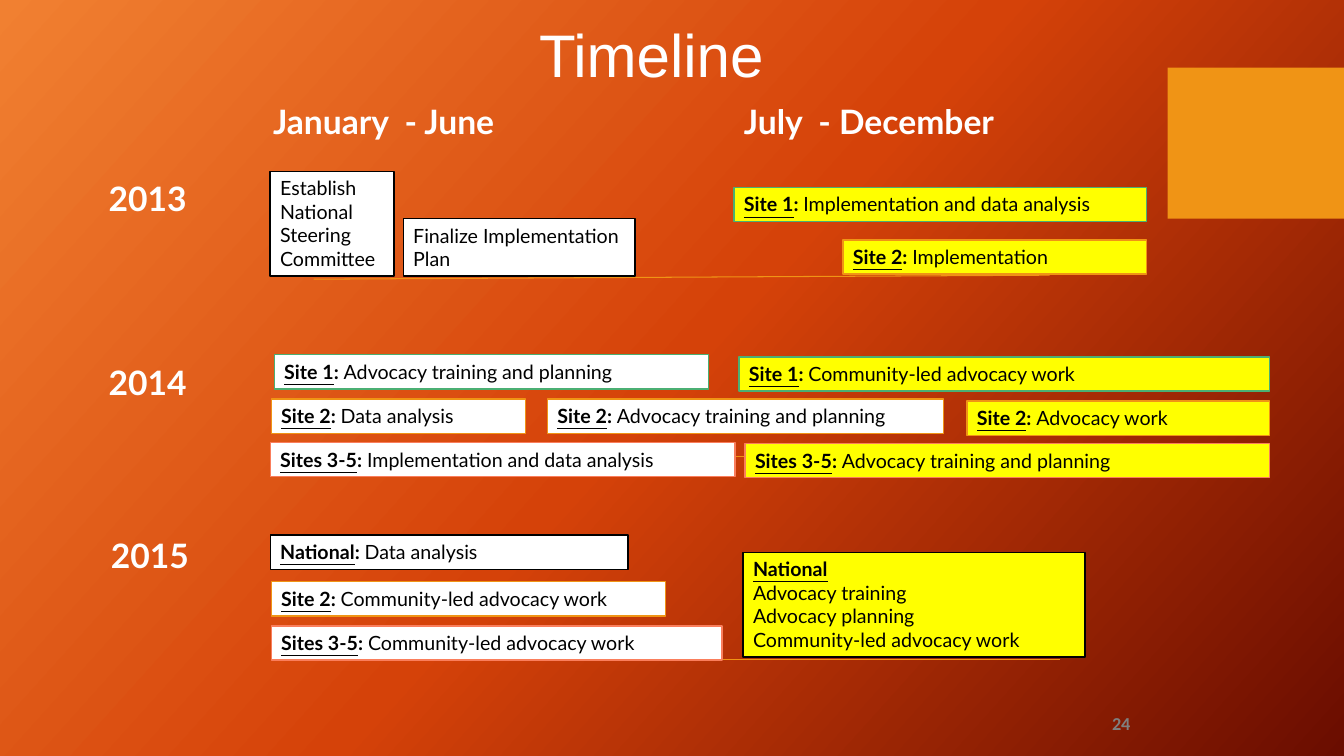
import copy
from dataclasses import dataclass

import pptx
import pptx.dml.color
import pptx.enum.shapes
import pptx.enum.text
import pptx.oxml.ns
import pptx.oxml.xmlchemy
import pptx.util

RGB = pptx.dml.color.RGBColor
ALIGN = pptx.enum.text.PP_ALIGN
ANCHOR = pptx.enum.text.MSO_ANCHOR
RECT = pptx.enum.shapes.MSO_SHAPE.RECTANGLE

WHITE = RGB(0xFF, 0xFF, 0xFF)
BLACK = RGB(0x00, 0x00, 0x00)
YELLOW = RGB(0xFF, 0xFF, 0x00)
ORANGE = RGB(0xF0, 0x94, 0x15)
GREEN = RGB(0x4B, 0xAF, 0x73)
SALMON = RGB(0xFA, 0x7E, 0x5C)
GRAY = RGB(0x7F, 0x7F, 0x7F)
BACK = ((0, RGB(0xF1, 0x80, 0x31)), (0.5, RGB(0xD5, 0x42, 0x09)),
        (1, RGB(0x6A, 0x0D, 0x00)))

WIDTH = pptx.util.Inches(13.33)
HEIGHT = pptx.util.Inches(7.5)
COL = WIDTH / 133.3
ROW = HEIGHT / 75
BAR = 3.4
EDGES = {"Site 1": GREEN, "Site 2": ORANGE, "Sites 3-5": SALMON}


@dataclass
class Area:
    col: float
    row: float
    cols: float
    rows: float = BAR

    def place(self) -> tuple[int, int, int, int]:
        return (round(self.col * COL), round(self.row * ROW),
                round(self.cols * COL), round(self.rows * ROW))


@dataclass
class Label:
    area: Area
    text: str
    size: float = 24
    face: str = "Lato"
    color: RGB = WHITE
    bold: bool = True
    align: ALIGN = ALIGN.LEFT
    base: float = 0.05
    anchor: ANCHOR = ANCHOR.TOP


@dataclass
class Task:
    area: Area
    fill: RGB
    site: str
    work: str


@dataclass
class Note:
    area: Area
    fill: RGB
    head: str
    lines: tuple[str, ...]


@dataclass
class Rule:
    left: float
    start: float
    right: float
    end: float


LABELS = (
    Label(Area(19.6, 1.1, 90, 7.8), "Timeline", 42.9, "Arial", bold=False,
          align=ALIGN.CENTER, base=0, anchor=ANCHOR.BOTTOM),
    Label(Area(26.1, 9.5, 33.6, 5), "January  - June"),
    Label(Area(72.8, 9.5, 33.8, 5), "July  - December"),
    Label(Area(9.8, 17.2, 15.2, 5), "2013"),
    Label(Area(9.8, 35.4, 10.4, 5), "2014"),
    Label(Area(10, 52.6, 10.9, 5), "2015"),
    Label(Area(107.6, 70.2, 5.5, 3.9), "24", 13, "Calibri", GRAY,
          align=ALIGN.RIGHT),
)
RULES = (
    Rule(31.1, 27.7, 104.1, 27.3),
    Rule(31.1, 45.3, 104.6, 45.3),
    Rule(30.6, 65.4, 105.1, 65.4),
)
NOTES = (
    Note(Area(26.8, 17, 12.3, 10.4), WHITE, "",
         ("Establish National Steering Committee",)),
    Note(Area(40, 21.7, 23, 5.7), WHITE, "", ("Finalize Implementation Plan",)),
    Note(Area(73.7, 54.8, 33.9, 10.4), YELLOW, "National",
         ("Advocacy training", "Advocacy planning",
          "Community-led advocacy work")),
)
TASKS = (
    Task(Area(72.8, 18.6, 40.9), YELLOW, "Site 1",
         "Implementation and data analysis"),
    Task(Area(83.6, 23.8, 30.1), YELLOW, "Site 2", "Implementation"),
    Task(Area(27.2, 35.2, 43.1), WHITE, "Site 1",
         "Advocacy training and planning"),
    Task(Area(73.3, 35.4, 52.6), YELLOW, "Site 1",
         "Community-led advocacy work"),
    Task(Area(26.9, 39.6, 25.2), WHITE, "Site 2", "Data analysis"),
    Task(Area(54.3, 39.6, 39.3), WHITE, "Site 2",
         "Advocacy training and planning"),
    Task(Area(95.9, 39.8, 30), YELLOW, "Site 2", "Advocacy work"),
    Task(Area(26.8, 43.9, 46.1), WHITE, "Sites 3-5",
         "Implementation and data analysis"),
    Task(Area(73.9, 44, 52), YELLOW, "Sites 3-5",
         "Advocacy training and planning"),
    Task(Area(26.8, 53.1, 35.5), WHITE, "National", "Data analysis"),
    Task(Area(26.9, 57.7, 39.1), WHITE, "Site 2",
         "Community-led advocacy work"),
    Task(Area(26.9, 62.1, 44.7), WHITE, "Sites 3-5",
         "Community-led advocacy work"),
)


def style(para, size: float, face: str, color: RGB) -> None:
    para.font.size = pptx.util.Pt(size)
    para.font.name = face
    para.font.color.rgb = color


def paint(slide) -> None:
    fill = slide.background.fill
    fill.gradient()
    fill.gradient_angle = 360 - 42
    stops = slide.element.find(".//" + pptx.oxml.ns.qn("a:gsLst"))
    stops.insert(1, copy.deepcopy(stops[0]))
    for stop, (share, color) in zip(fill.gradient_stops, BACK):
        stop.position = share
        stop.color.rgb = color


def draw_label(slide, label: Label) -> None:
    frame = slide.shapes.add_textbox(*label.area.place()).text_frame
    frame.word_wrap = True
    frame.vertical_anchor = label.anchor
    frame.margin_bottom = pptx.util.Inches(label.base)
    para = frame.paragraphs[0]
    para.text = label.text
    para.alignment = label.align
    style(para, label.size, label.face, label.color)
    para.font.bold = label.bold


def draw_rule(slide, rule: Rule) -> None:
    line = slide.shapes.add_connector(
        pptx.enum.shapes.MSO_CONNECTOR.STRAIGHT,
        round(rule.left * COL), round(rule.start * ROW),
        round(rule.right * COL), round(rule.end * ROW))
    line.line.color.rgb = ORANGE
    line.line.width = pptx.util.Pt(0.75)
    line.element.spPr.append(pptx.oxml.xmlchemy.OxmlElement("a:effectLst"))


def draw_box(slide, area: Area, fill: RGB):
    box = slide.shapes.add_shape(RECT, *area.place())
    box.shadow.inherit = False
    box.fill.solid()
    box.fill.fore_color.rgb = fill
    return box


def draw_card(slide, area: Area, fill: RGB, edge: RGB, count: int):
    box = draw_box(slide, area, fill)
    box.line.color.rgb = edge
    box.line.width = pptx.util.Pt(1)
    frame = box.text_frame
    frame.word_wrap = True
    frame.vertical_anchor = ANCHOR.TOP
    for _ in range(count - 1):
        frame.add_paragraph()
    for para in frame.paragraphs:
        para.alignment = ALIGN.LEFT
        style(para, 14, "Lato", BLACK)
    return frame.paragraphs


def draw_task(slide, task: Task) -> None:
    edge = EDGES.get(task.site, BLACK)
    para = draw_card(slide, task.area, task.fill, edge, 1)[0]
    parts = ((task.site, True, True), (": ", True, False),
             (task.work, False, False))
    for text, bold, under in parts:
        run = para.add_run()
        run.text = text
        run.font.bold = bold
        run.font.underline = under


def draw_note(slide, note: Note) -> None:
    lines = ((note.head,) if note.head else ()) + note.lines
    paras = draw_card(slide, note.area, note.fill, BLACK, len(lines))
    for para, text in zip(paras, lines):
        para.text = text
        para.font.bold = para.font.underline = text == note.head


def main() -> None:
    deck = pptx.Presentation()
    deck.slide_width, deck.slide_height = WIDTH, HEIGHT
    slide = deck.slides.add_slide(deck.slide_layouts[6])
    paint(slide)
    draw_box(slide, Area(115.8, 6.7, 17.5, 15), ORANGE).line.fill.background()
    for draw, items in ((draw_rule, RULES), (draw_label, LABELS),
                        (draw_note, NOTES), (draw_task, TASKS)):
        for item in items:
            draw(slide, item)
    deck.save("out.pptx")


if __name__ == "__main__":
    main()
